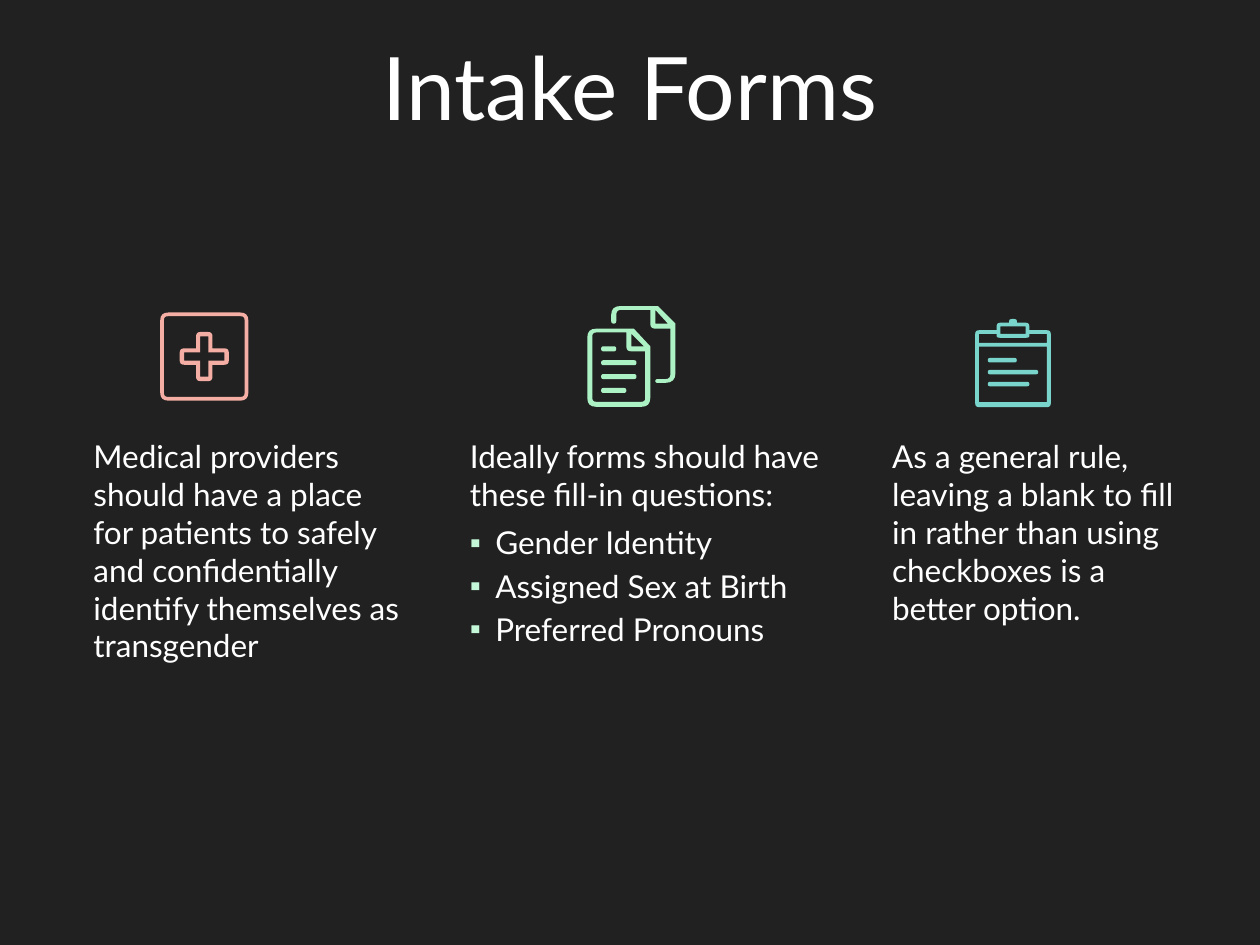
import math

import pptx
import pptx.dml.color
import pptx.enum.text
import pptx.oxml
import pptx.oxml.ns
import pptx.util
from pptx.util import Cm

BACKGROUND = pptx.dml.color.RGBColor(0x21, 0x21, 0x21)
WHITE = pptx.dml.color.RGBColor(0xFF, 0xFF, 0xFF)
BULLET = pptx.dml.color.RGBColor(0xC3, 0xF7, 0xD8)
CORAL = pptx.dml.color.RGBColor(0xF4, 0xAE, 0xA4)
MINT = pptx.dml.color.RGBColor(0xAC, 0xF2, 0xC4)
TEAL = pptx.dml.color.RGBColor(0x79, 0xD4, 0xCC)
FONT = "Lato"
ICON_UNIT = Cm(2.54) / 100


def box(left, top, right, bottom, radius):
    return [(left, top, radius), (right, top, radius),
            (right, bottom, radius), (left, bottom, radius)]


def round_corners(corners):
    """Turn (x, y, radius) corners into the points of a closed outline."""
    points = []
    for i, (x, y, radius) in enumerate(corners):
        if radius == 0:
            points.append((x, y))
            continue
        offsets = []
        for nx, ny, _ in (corners[i - 1], corners[(i + 1) % len(corners)]):
            ratio = min(radius / math.dist((x, y), (nx, ny)), 0.5)
            offsets.append(((nx - x) * ratio, (ny - y) * ratio))
        (ax, ay), (bx, by) = offsets
        for step in range(5):
            t = step / 4
            points.append((x + ax * (1 - t) ** 2 + bx * t ** 2,
                           y + ay * (1 - t) ** 2 + by * t ** 2))
    return points


prs = pptx.Presentation()
prs.slide_width, prs.slide_height = Cm(25.4), Cm(19.05)
slide = prs.slides.add_slide(prs.slide_layouts.get_by_name("Comparison"))
slide.background.fill.solid()
slide.background.fill.fore_color.rgb = BACKGROUND

# Title
title = slide.shapes.title
title.left, title.top, title.width, title.height = Cm(0), Cm(0.46), Cm(25.4), Cm(2.54)
heading = title.text_frame.paragraphs[0]
heading.alignment = pptx.enum.text.PP_ALIGN.CENTER
heading_run = heading.add_run()
heading_run.text = "Intake Forms"
heading_run.font.name = FONT
heading_run.font.size = pptx.util.Pt(50)
heading_run.font.color.rgb = WHITE

# Three columns: left, width, height, then (text, space before, bulleted)
columns = [
    (1.63, 6.78, 4.88, [
        ("Medical providers should have a place for patients to safely and "
         "confidentially identify themselves as transgender", 0, False)]),
    (9.22, 8.74, 5.16, [
        ("Ideally forms should have these fill-in questions:", 0, False),
        ("Gender Identity", 6, True),
        ("Assigned Sex at Birth", 3, True),
        ("Preferred Pronouns", 3, True)]),
    (17.73, 6.35, 5.16, [
        ("As a general rule, leaving a blank to fill in rather than using "
         "checkboxes is a better option.", 0, False)]),
]
bodies = [p for p in slide.placeholders if p.placeholder_format.idx in (1, 2, 3, 4)]
unused = bodies.pop()
unused.element.getparent().remove(unused.element)

for body, (left, width, height, lines) in zip(bodies, columns):
    body.left, body.top, body.width, body.height = Cm(left), Cm(8.69), Cm(width), Cm(height)
    frame = body.text_frame
    frame.word_wrap = True
    frame.auto_size = pptx.enum.text.MSO_AUTO_SIZE.NONE
    frame.vertical_anchor = pptx.enum.text.MSO_ANCHOR.TOP
    for i, (text, space, bulleted) in enumerate(lines):
        paragraph = frame.add_paragraph() if i else frame.paragraphs[0]
        paragraph.space_before = pptx.util.Pt(space)
        properties = paragraph._p.get_or_add_pPr()
        indent = Cm(0.51) if bulleted else 0
        properties.set("marL", str(indent))
        properties.set("indent", str(-indent))
        if bulleted:
            color = pptx.oxml.ns.qn("a:buClr")
            bullet_color = properties.makeelement(color, {})
            bullet_color.append(properties.makeelement(
                pptx.oxml.ns.qn("a:srgbClr"), {"val": str(BULLET)}))
            properties.append(bullet_color)
            properties.append(properties.makeelement(
                pptx.oxml.ns.qn("a:buChar"), {"char": "▪"}))
        else:
            properties.append(properties.makeelement(pptx.oxml.ns.qn("a:buNone"), {}))
        run = paragraph.add_run()
        run.text = text
        run.font.name = FONT
        run.font.size = pptx.util.Pt(18)
        run.font.bold = False
        run.font.color.rgb = WHITE

# Icon outlines in hundredths of an inch; an outline inside another cuts a hole
medical_cross = [box(0, 0, 70, 70, 6.5), box(3, 3, 67, 67, 3)]
for reach, half, radius in ((19.5, 6.5, 3.5), (16, 3.25, 0)):
    cross = []
    for ux, uy in ((0, -1), (1, 0), (0, 1), (-1, 0)):
        for along, across, corner in ((reach, -half, radius), (reach, half, radius),
                                      (half, half, 0)):
            cross.append((35 + ux * along - uy * across,
                          35 + uy * along + ux * across, corner))
    medical_cross.append(cross)

forms = [
    [(0, 18, 7), (37, 18, 0), (50, 32, 0), (50, 80, 7), (0, 80, 7)],
    [(4, 21, 3), (31, 21, 0), (31, 36, 4), (46, 36, 0), (46, 76, 3), (4, 76, 3)],
    [(35, 22, 0), (45, 32, 0), (35, 32, 0)],
    [(56, 0, 0), (19, 0, 7.5), (19, 14, 2), (23, 14, 2), (23, 3, 4), (50, 3, 0),
     (50, 18, 4), (66, 18, 0), (66, 58, 4), (54, 58, 2), (54, 61, 2), (70, 61, 8),
     (70, 14, 0)],
    [(54, 3, 0), (64, 14, 0), (54, 14, 0)],
]
for i, right in enumerate((23, 39, 39, 31)):
    forms.append(box(11, 32 + 11 * i, right, 36 + 11 * i, 2))

clipboard = [
    [(0, 9, 3), (17, 9, 0), (17, 3, 3), (27, 3, 0), (27, 0, 3), (33, 0, 3),
     (33, 3, 0), (43, 3, 3), (43, 9, 0), (60, 9, 3), (60, 70, 3), (0, 70, 3)],
    [(3, 12, 0), (17, 12, 0), (17, 15, 3), (43, 15, 3), (43, 12, 0), (57, 12, 0),
     (57, 19, 0), (3, 19, 0)],
    box(3, 22, 57, 66, 0),
    box(20, 6, 40, 12, 0),
]
for i, right in enumerate((33, 50, 43)):
    clipboard.append(box(10, 31 + 9.5 * i, right, 34.5 + 9.5 * i, 1.75))

for left, top, color, outlines in ((3.23, 6.3, CORAL, medical_cross),
                                   (11.84, 6.17, MINT, forms),
                                   (19.66, 6.43, TEAL, clipboard)):
    builder = None
    for outline in outlines:
        points = [(round(Cm(left) + x * ICON_UNIT), round(Cm(top) + y * ICON_UNIT))
                  for x, y in round_corners(outline)]
        if builder is None:
            builder = slide.shapes.build_freeform(*points[0])
        else:
            builder.move_to(*points[0])
        builder.add_line_segments(points[1:], close=True)
    icon = builder.convert_to_shape()
    icon.shadow.inherit = False
    icon.fill.solid()
    icon.fill.fore_color.rgb = color
    icon.line.fill.background()

prs.save("out.pptx")
